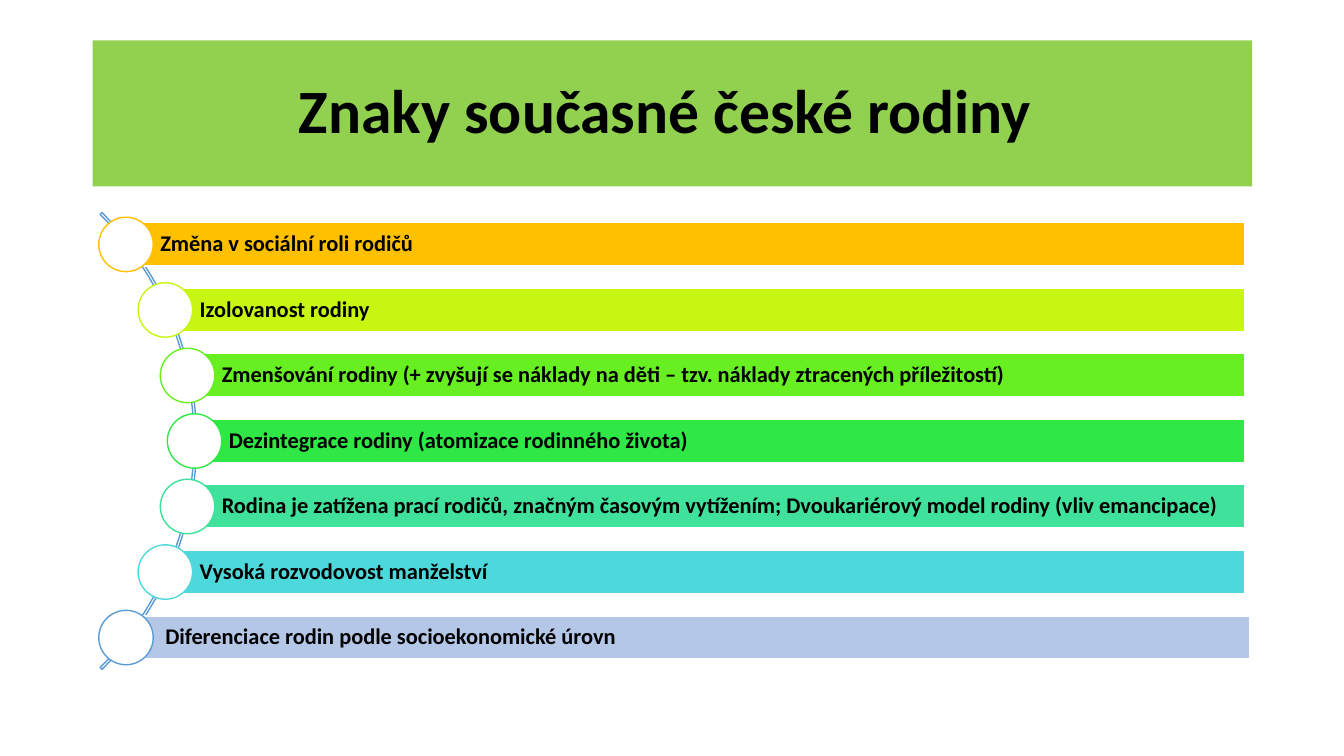
from dataclasses import dataclass

from pptx import Presentation
from pptx.dml.color import RGBColor
from pptx.enum.shapes import MSO_SHAPE as SHAPE
from pptx.enum.text import MSO_ANCHOR as ANCHOR, PP_ALIGN as ALIGN
from pptx.shapes.autoshape import Shape
from pptx.slide import Slide
from pptx.util import Inches, Pt

COLORS = {
    "title": "92D050",
    "text": "000000",
    "white": "FFFFFF",
    "blue": "5B9BD5",
    "orange": "FFC000",
    "lime": "C7F711",
    "green": "67EF21",
    "emerald": "30E845",
    "mint": "3FE19B",
    "cyan": "4DD8DB",
    "pale_blue": "B4C7E7",
}
FONT = "Calibri"
BAR_TOP, BAR_PITCH, BAR_HEIGHT, BAR_RIGHT = 2.21, 0.65, 0.43, 12.35
CIRCLE = 0.54


@dataclass(frozen=True)
class Feature:
    text: str
    axis: float
    fill: str
    ring: str
    shift: float = 0


FEATURES = [
    Feature("Změna v\u00a0sociální roli rodičů", 1.25, "orange", "orange"),
    Feature("Izolovanost rodiny", 1.64, "lime", "lime"),
    Feature("Zmenšování rodiny (+ zvyšují se náklady na děti – tzv. náklady ztracených příležitostí)",
            1.86, "green", "green"),
    Feature("Dezintegrace rodiny (atomizace rodinného života)", 1.93, "emerald", "emerald"),
    Feature("Rodina je zatížena prací rodičů, značným časovým vytížením; "
            "Dvoukariérový model rodiny (vliv emancipace)", 1.86, "mint", "mint"),
    Feature("Vysoká rozvodovost manželství", 1.64, "cyan", "cyan"),
    Feature("Diferenciace rodin podle socioekonomické úrovn", 1.25, "pale_blue", "blue", 0.05),
]


def add_box(slide: Slide, kind: SHAPE, x: float, y: float, w: float, h: float,
            fill: str | None = None, line: str | None = None) -> Shape:
    sp = slide.shapes.add_shape(kind, Inches(x), Inches(y), Inches(w), Inches(h))
    sp.shadow.inherit = False
    if fill:
        sp.fill.solid()
        sp.fill.fore_color.rgb = RGBColor.from_string(COLORS[fill])
    else:
        sp.fill.background()
    if line:
        sp.line.color.rgb = RGBColor.from_string(COLORS[line])
        sp.line.width = Pt(1)
    else:
        sp.line.fill.background()
    return sp


def write(sp: Shape, text: str, *, size: float, align: ALIGN = ALIGN.LEFT,
          left: float = 0.1, margin: float = 0.04, spacing: float = 0.9) -> None:
    tf = sp.text_frame
    tf.word_wrap = True
    tf.vertical_anchor = ANCHOR.MIDDLE
    tf.margin_left = Inches(left)
    tf.margin_right = tf.margin_top = tf.margin_bottom = Inches(margin)
    p = tf.paragraphs[0]
    p.alignment = align
    p.line_spacing = spacing
    r = p.add_run()
    r.text = text
    r.font.name = FONT
    r.font.size = Pt(size)
    r.font.bold = True
    r.font.color.rgb = RGBColor.from_string(COLORS["text"])


def add_feature(slide: Slide, feature: Feature, row: int) -> None:
    y = BAR_TOP + row * BAR_PITCH
    bar = add_box(slide, SHAPE.RECTANGLE, feature.axis + feature.shift, y,
                  BAR_RIGHT - feature.axis, BAR_HEIGHT, feature.fill, "white")
    write(bar, feature.text, size=16, left=0.34)
    add_box(slide, SHAPE.OVAL, feature.axis - CIRCLE / 2, y + (BAR_HEIGHT - CIRCLE) / 2,
            CIRCLE, CIRCLE, "white", feature.ring)


def main() -> None:
    prs = Presentation()
    prs.slide_width, prs.slide_height = Inches(13.33), Inches(7.5)
    slide = prs.slides.add_slide(prs.slide_layouts[6])

    title = add_box(slide, SHAPE.RECTANGLE, 0.92, 0.4, 11.5, 1.45, "title")
    write(title, "Znaky současné české rodiny ", size=44, align=ALIGN.CENTER, margin=0.1)

    arc = add_box(slide, SHAPE.BLOCK_ARC, -4.46, 1.17, 6.41, 6.41, line="blue")
    for i, value in enumerate((189, 27, 0.004)):
        arc.adjustments[i] = value

    for row, feature in enumerate(FEATURES):
        add_feature(slide, feature, row)

    prs.save("out.pptx")


if __name__ == "__main__":
    main()
